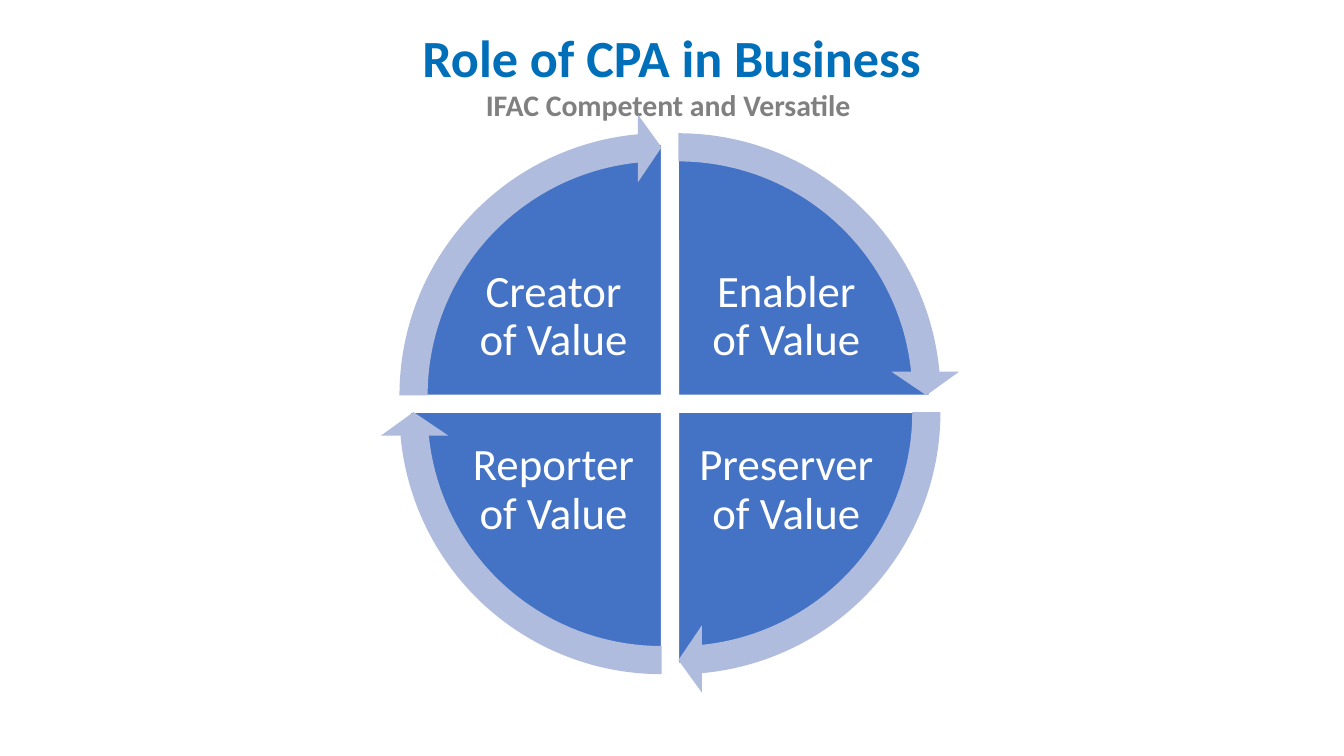
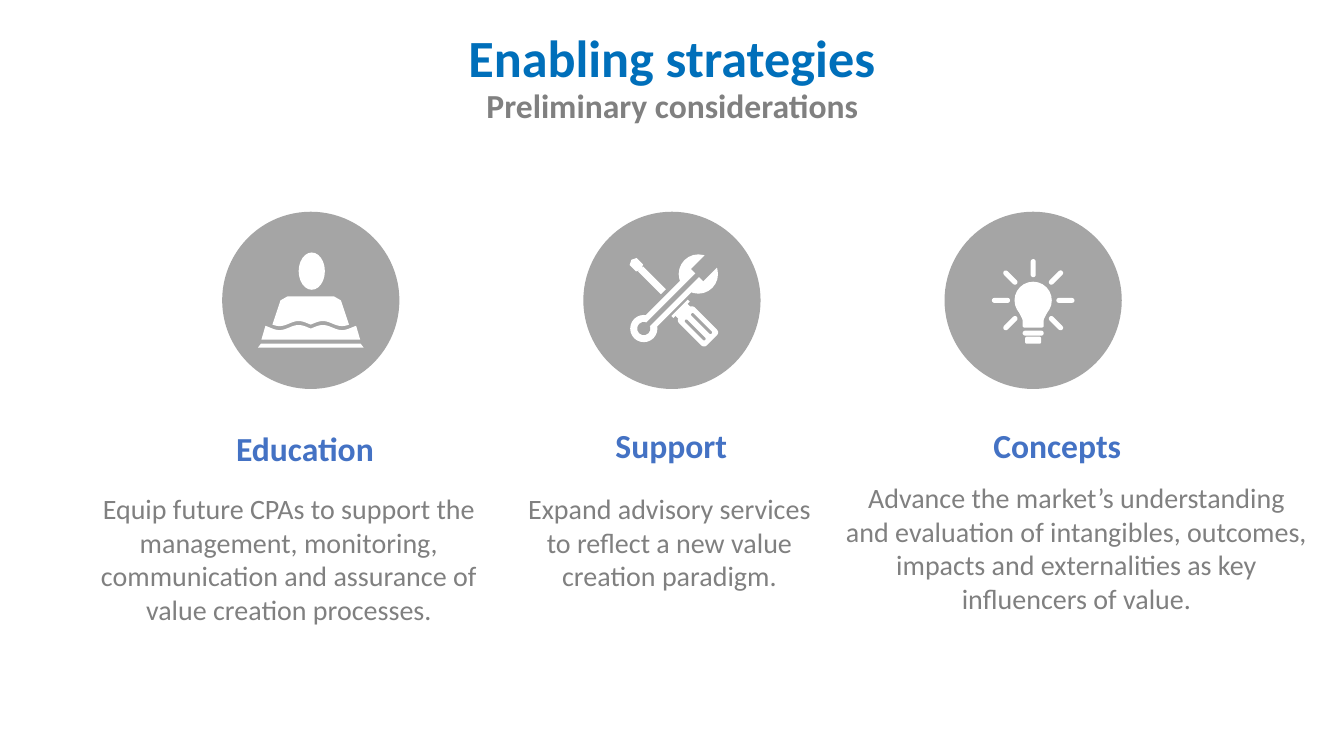
import math

import pptx
import pptx.dml.color
import pptx.enum.shapes
import pptx.enum.text
import pptx.util

COLS, ROWS = 160, 90
CELL = pptx.util.Inches(1) / 12
DOT = 0.12
FONT = "Calibri"
TITLE, BLUE, PALE = "006FBA", "4472C4", "B0BCDE"
GREY, DISC, WHITE = "808080", "A5A5A5", "FFFFFF"
KIND = pptx.enum.shapes.MSO_SHAPE
TURN, QUARTER = 216, 54


def cells(*sizes):
    return [round(size * CELL) for size in sizes]


def tint(name):
    return pptx.dml.color.RGBColor.from_string(name)


def centred(x, y, wide, high):
    return x - wide / 2, y - high / 2, wide, high


def paint(item, fill, edge=None):
    item.shadow.inherit = False
    item.fill.solid()
    item.fill.fore_color.rgb = tint(fill)
    if edge:
        item.line.color.rgb = tint(edge)
        item.line.width = pptx.util.Pt(1)
    else:
        item.line.fill.background()


def shape(slide, kind, place, fill, edge=None, tweaks=(), angle=0):
    item = slide.shapes.add_shape(kind, *cells(*place))
    paint(item, fill, edge)
    item.rotation = angle
    for index, tweak in enumerate(tweaks):
        item.adjustments[index] = tweak


def text(slide, place, words, size, color, bold=False, wrap=True,
         middle=False, pads=(0, 0, 0, 0), pitch=None):
    frame = slide.shapes.add_textbox(*cells(*place)).text_frame
    frame.word_wrap = wrap
    (frame.margin_left, frame.margin_top,
     frame.margin_right, frame.margin_bottom) = cells(*pads)
    anchor = pptx.enum.text.MSO_ANCHOR
    frame.vertical_anchor = anchor.MIDDLE if middle else anchor.TOP
    para = frame.paragraphs[0]
    para.alignment = pptx.enum.text.PP_ALIGN.CENTER
    if pitch:
        para.line_spacing = pitch
    run = para.add_run()
    run.text = words
    run.font.name = FONT
    run.font.size = pptx.util.Pt(size)
    run.font.bold = bold
    run.font.color.rgb = tint(color)


def titles(slide, main_line, sub_line, sub_size, sub_left, sub_wide):
    text(slide, (38.3, 3.6, 83.4, 7.3), main_line, 37.3, TITLE, bold=True,
         wrap=False, middle=True, pitch=0.9)
    text(slide, (sub_left, 11, sub_wide, 3.5), sub_line, sub_size, GREY,
         bold=True, middle=True, pitch=0.9)


def part(slide, hub, kind, along, across, length, width, angle=0,
         fill=WHITE, tweaks=()):
    turn = math.radians(angle)
    x = along * math.cos(turn) - across * math.sin(turn)
    y = along * math.sin(turn) + across * math.cos(turn)
    place = centred(hub[0] + x * DOT, hub[1] + y * DOT,
                    length * DOT, width * DOT)
    shape(slide, kind, place, fill, tweaks=tweaks, angle=angle)


def outline(slide, hub, spots):
    points = [cells(hub[0] + x * DOT, hub[1] + y * DOT) for x, y in spots]
    pen = slide.shapes.build_freeform(*points[0], scale=1.0)
    pen.add_line_segments(points[1:], close=True)
    paint(pen.convert_to_shape(), WHITE)


def page(half, lift=0):
    crest, wave, level, swell = 12, 38, 27, 2.5
    return [(x, level - lift - swell
             * math.cos(math.tau * (abs(x) - crest) / wave))
            for x in range(-half, half + 1)]


def reader(slide, hub):
    shoulder, neck = (30, 0), (23, -4)
    right = [shoulder, neck]
    left = [(-x, y) for x, y in reversed(right)]
    part(slide, hub, KIND.OVAL, 1, -29, 26, 37)
    outline(slide, hub, page(38, lift=4) + right + left)
    outline(slide, hub, page(45) + [(49, 39), (-49, 39)])
    part(slide, hub, KIND.TRAPEZOID, 0, 45, 105, 4, tweaks=(0.75,))


def driver(slide, hub, angle):
    part(slide, hub, KIND.HEXAGON, -50, 0, 14, 10, angle)
    part(slide, hub, KIND.RECTANGLE, -28, 0, 32, 7, angle)
    part(slide, hub, KIND.RECTANGLE, 12, 0, 3, 23, angle)
    part(slide, hub, KIND.RECTANGLE, 15, 0, 6, 17, angle)
    part(slide, hub, KIND.ROUNDED_RECTANGLE, 36.5, 0, 39, 22, angle)
    for side in (-1, 1):
        part(slide, hub, KIND.ROUNDED_RECTANGLE, 37, side * 4.5, 28, 3,
             angle, DISC, (0.5,))


def wrench(slide, hub, angle):
    ring, jaw = -39.5, 37
    part(slide, hub, KIND.OVAL, ring, 0, 27, 27, angle)
    part(slide, hub, KIND.OVAL, jaw, 0, 39, 39, angle)
    part(slide, hub, KIND.RECTANGLE, -4, 0, 60, 16, angle)
    part(slide, hub, KIND.OVAL, ring, 0, 13, 13, angle, DISC)
    part(slide, hub, KIND.RECTANGLE, 1, 0, 70, 5, angle, DISC)
    part(slide, hub, KIND.RECTANGLE, jaw + 10, 0, 23, 17, angle, DISC)


def tools(slide, hub):
    driver(slide, hub, 45)
    wrench(slide, hub, -45)


def lamp(slide, hub):
    for angle in range(135, 406, 45):
        part(slide, hub, KIND.ROUNDED_RECTANGLE, 32, 0, 18, 5, angle,
             tweaks=(0.5,))
    part(slide, hub, KIND.OVAL, 0, 0, 37, 37)
    part(slide, hub, KIND.FLOWCHART_MANUAL_OPERATION, 0, 16, 30, 12)
    part(slide, hub, KIND.ROUNDED_RECTANGLE, 0, 21.5, 21, 11)
    part(slide, hub, KIND.ROUNDED_RECTANGLE, 0, 32.5, 21, 5, tweaks=(0.5,))
    part(slide, hub, KIND.ROUNDED_RECTANGLE, 0, 39.5, 16, 7, tweaks=(0.25,))


def wheel(slide):
    mid_x, mid_y, gap = 79.76, 48.06, 1
    names = [("Enabler", 1, -1), ("Preserver", 1, 1),
             ("Reporter", -1, 1), ("Creator", -1, -1)]
    rings = []
    for index, (name, side, level) in enumerate(names):
        start = (3 * QUARTER + QUARTER * index) % TURN
        spot = mid_x + side * gap, mid_y + level * gap
        shape(slide, KIND.PIE, centred(*spot, 59.8, 59.8), BLUE, WHITE,
              (start, (start + QUARTER) % TURN))
        label = centred(mid_x + side * 13.86, mid_y + level * 10.32, 22, 16.4)
        text(slide, label, name + " of Value", 32, WHITE, middle=True,
             pads=(0.5,) * 4, pitch=0.9)
        rings.append((spot, start))
    for spot, start in rings:
        shape(slide, KIND.CIRCULAR_ARROW, centred(*spot, 67.1, 67.1), PALE,
              tweaks=(0.05, 3.28, (start + 50.72) % TURN, start, 0.06))


def plans(slide):
    first, pitch, level, disc = 37, 43, 35.76, 21.1
    items = [
        ("Education", (28, 50.4, 17.8, 6),
         "Equip future CPAs to support the management, monitoring, "
         "communication and assurance of value creation processes.",
         (9.24, 58.5, 50.3, 16.2), reader),
        ("Support", (73.2, 50, 14.6, 6),
         "Expand advisory services to reflect a new value creation paradigm.",
         (61.4, 58.5, 36.6, 12.1), tools),
        ("Concepts", (112.6, 50, 27.7, 5.2),
         "Advance the market’s understanding and evaluation of intangibles, "
         "outcomes, impacts and externalities as key influencers of value.",
         (100.5, 57.2, 55.3, 24.1), lamp),
    ]
    for index, (name, name_box, words, word_box, draw) in enumerate(items):
        hub = first + pitch * index, level
        text(slide, word_box, words, 20, GREY)
        text(slide, name_box, name, 24, BLUE, bold=True, wrap=False,
             pads=(0, 0.6, 1.2, 0.6))
        shape(slide, KIND.OVAL, centred(*hub, disc, disc), DISC)
        draw(slide, hub)


def main():
    deck = pptx.Presentation()
    deck.slide_width, deck.slide_height = cells(COLS, ROWS)
    blank = deck.slide_layouts[6]
    role = deck.slides.add_slide(blank)
    titles(role, "Role of CPA in Business", "IFAC Competent and Versatile ",
           21.3, 57.2, 45.5)
    wheel(role)
    ways = deck.slides.add_slide(blank)
    plans(ways)
    titles(ways, "Enabling strategies", "Preliminary considerations",
           24, 56.4, 47.3)
    deck.save("out.pptx")


if __name__ == "__main__":
    main()
